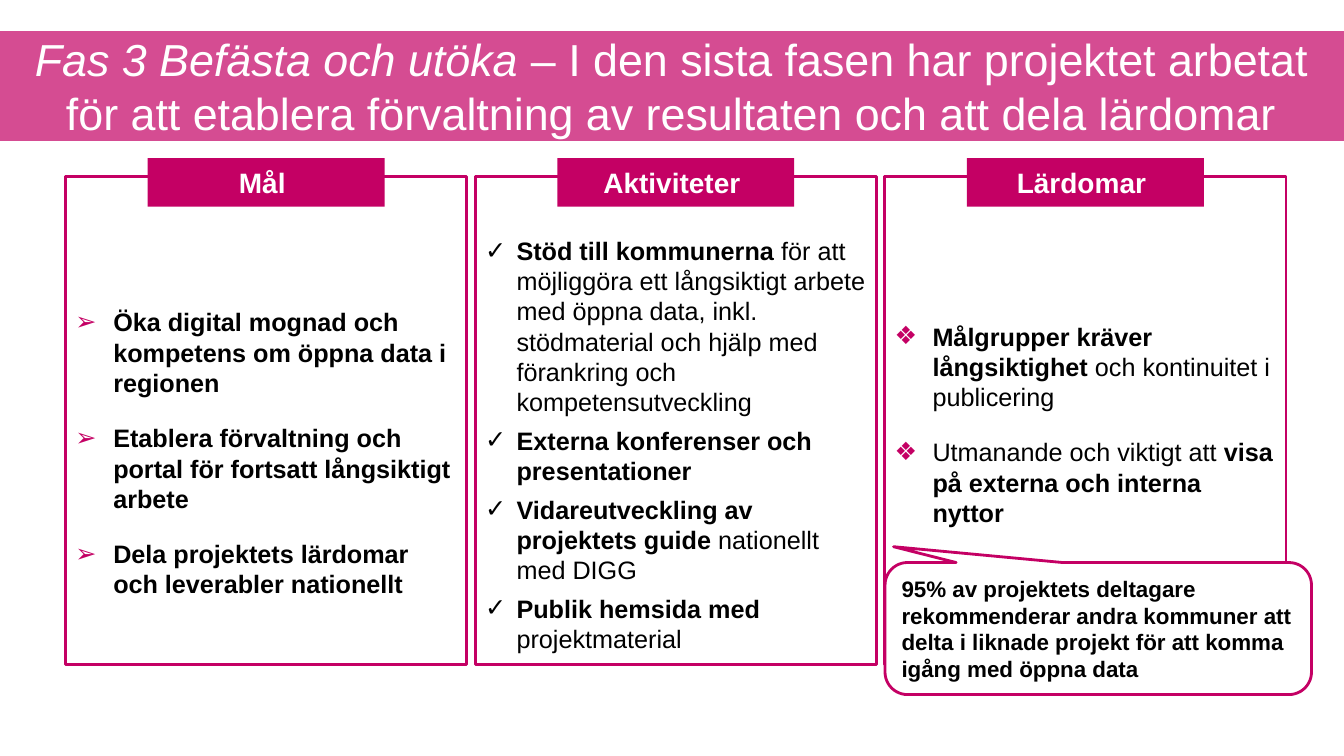
"""Build the slide on phase 3: goals, activities and lessons in three columns."""
from lxml import etree
from pptx import Presentation
from pptx.dml.color import RGBColor
from pptx.enum import shapes, text
from pptx.oxml.ns import qn
from pptx.util import Pt

HUES = {"pink": "C40064", "white": "FFFFFF", "black": "000000"}
FONT = "Arial"

TITLE = [
    ("Fas 3 Befästa och utöka ", "i"),
    ("– I den sista fasen har projektet arbetat för att etablera "
     "förvaltning av resultaten och att dela lärdomar", ""),
]
COLUMNS = [
    {"head": "Mål ", "mark": "➢", "tint": "pink", "indent": 27, "gap": 18, "inset": 50,
     "items": [
         [("Öka digital mognad och kompetens om öppna data i regionen", "b")],
         [("Etablera förvaltning och portal för fortsatt långsiktigt arbete", "b")],
         [("Dela projektets lärdomar och leverabler nationellt", "b")],
     ]},
    {"head": "Aktiviteter ", "mark": "✓", "tint": "black", "indent": 22.5, "gap": 6, "inset": 38,
     "items": [
         [("Stöd till kommunerna ", "b"),
          ("för att möjliggöra ett långsiktigt arbete med öppna data, inkl. "
           "stödmaterial och hjälp med förankring och kompetensutveckling", "")],
         [("Externa konferenser och presentationer", "b")],
         [("Vidareutveckling av projektets guide ", "b"), ("nationellt med DIGG", "")],
         [("Publik hemsida med ", "b"), ("projektmaterial", "")],
     ]},
    {"head": "Lärdomar ", "mark": "❖", "tint": "pink", "indent": 27, "gap": 18, "inset": 9,
     "items": [
         [("Målgrupper kräver långsiktighet ", "b"), ("och kontinuitet i publicering", "")],
         [("Utmanande och viktigt att ", ""), ("visa på externa och interna nyttor", "b")],
     ]},
]
QUOTE = [("95% av projektets deltagare rekommenderar andra kommuner att delta i "
          "liknade projekt för att komma igång med öppna data", "b")]

LEFT, TOP, WIDTH, HEIGHT, PITCH = 46.8, 126, 286.6, 348.5, 292.6
TAG_W, TAG_H, TAG_TOP = 169.2, 34.6, 113


def color(name):
    return RGBColor.from_string(HUES[name])


def paint(shape, fill, line=None, alpha=100):
    shape.fill.solid()
    shape.fill.fore_color.rgb = color(fill)
    if alpha < 100:
        tone = shape.element.spPr.find(qn("a:solidFill"))[0]
        etree.SubElement(tone, qn("a:alpha"), val=str(alpha * 1000))
    if line:
        shape.line.color.rgb = color(line)
        shape.line.width = Pt(2)
    else:
        shape.line.fill.background()


def frame(shape, left=7.2, top=3.6, right=7.2, bottom=3.6):
    body = shape.text_frame
    body.word_wrap = True
    body.auto_size = text.MSO_AUTO_SIZE.NONE
    body.vertical_anchor = text.MSO_ANCHOR.MIDDLE
    body.margin_left, body.margin_top = Pt(left), Pt(top)
    body.margin_right, body.margin_bottom = Pt(right), Pt(bottom)
    return body


def write(para, runs, size, hue, align="LEFT"):
    para.alignment = getattr(text.PP_ALIGN, align)
    for words, style in runs:
        run = para.add_run()
        run.text = words
        font = run.font
        font.name, font.size = FONT, Pt(size)
        font.bold, font.italic = "b" in style, "i" in style
        font.color.rgb = color(hue)


def bullet(para, mark, tint, indent):
    props = para._p.get_or_add_pPr()
    props.set("marL", str(Pt(indent)))
    props.set("indent", str(-Pt(indent)))
    tone = etree.SubElement(props, qn("a:buClr"))
    etree.SubElement(tone, qn("a:srgbClr"), val=HUES[tint])
    etree.SubElement(props, qn("a:buFont"), typeface=FONT)
    etree.SubElement(props, qn("a:buChar"), char=mark)


def add(slide, kind, *box):
    shape = slide.shapes.add_shape(kind, *map(Pt, box))
    shape.shadow.inherit = False
    return shape


def add_title(slide):
    title = slide.shapes.title
    title.left, title.top, title.width, title.height = map(Pt, (-15.8, 20.9, 991.4, 80.6))
    paint(title, "pink", "white", 70)
    para = frame(title, 39.6, 0, 39.6, 0).paragraphs[0]
    para.line_spacing = 1.0
    write(para, TITLE, 32, "white", "CENTER")


def add_column(slide, left, col):
    rect = shapes.MSO_SHAPE.RECTANGLE
    panel = add(slide, rect, left, TOP, WIDTH, HEIGHT)
    paint(panel, "white", "pink", 80)
    body = frame(panel, top=col["inset"])
    for n, runs in enumerate(col["items"]):
        para = body.add_paragraph() if n else body.paragraphs[0]
        bullet(para, col["mark"], col["tint"], col["indent"])
        if n:
            para.space_before = Pt(col["gap"])
        write(para, runs, 18, "black")
    tag = add(slide, rect, left + (WIDTH - TAG_W) / 2, TAG_TOP, TAG_W, TAG_H)
    paint(tag, "pink")
    write(frame(tag).paragraphs[0], [(col["head"], "b")], 20, "white", "CENTER")


def add_quote(slide):
    kind = shapes.MSO_SHAPE.ROUNDED_RECTANGULAR_CALLOUT
    quote = add(slide, kind, 632.2, 401.8, 304.6, 94.3)
    for n, value in enumerate((-0.48, -0.62, 0.17)):
        quote.adjustments[n] = value
    paint(quote, "white", "pink")
    write(frame(quote).paragraphs[0], QUOTE, 16, "black")


def main():
    deck = Presentation()
    deck.slide_width, deck.slide_height = Pt(960), Pt(540)
    slide = deck.slides.add_slide(deck.slide_layouts[5])
    add_title(slide)
    for n, col in enumerate(COLUMNS):
        add_column(slide, LEFT + n * PITCH, col)
    add_quote(slide)
    deck.save("out.pptx")


if __name__ == "__main__":
    main()
